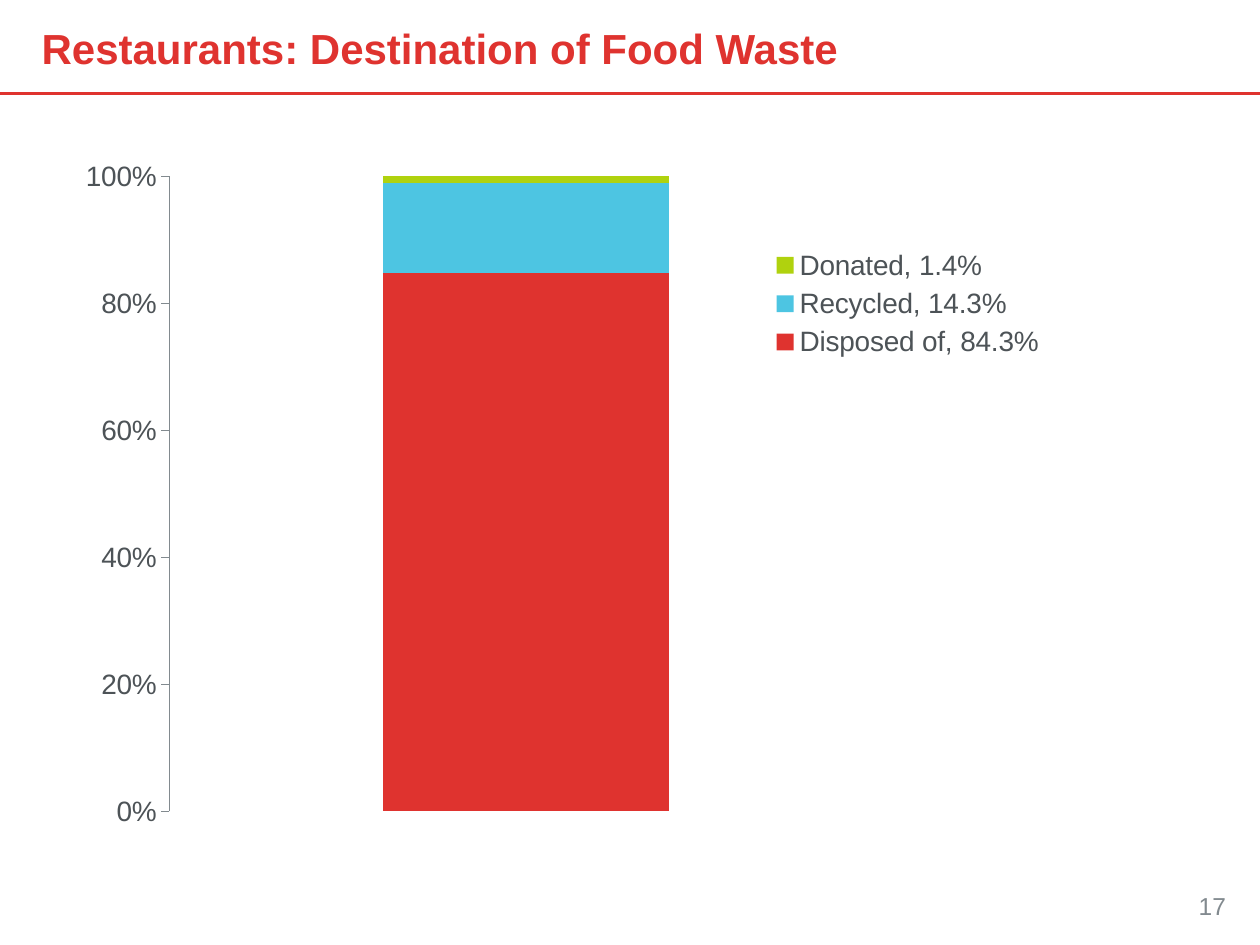
from dataclasses import dataclass

import lxml.etree
import pptx
import pptx.chart.data
import pptx.dml.color
import pptx.enum.chart
import pptx.enum.shapes
import pptx.enum.text
import pptx.oxml
import pptx.oxml.ns
import pptx.util
from pptx.util import Inches

COLORS = {
    "red": "DF332F",
    "blue": "4DC5E2",
    "green": "B0D20E",
    "text": "4D5357",
    "axis": "828A8F",
}
FONT = "Arial"


@dataclass
class Box:
    """A place on the slide, in inches."""
    left: float
    top: float
    width: float
    height: float

    def lengths(self) -> list[pptx.util.Length]:
        return [Inches(side) for side in (self.left, self.top, self.width, self.height)]


@dataclass
class Destination:
    name: str
    percent: int
    color: str


@dataclass
class Label:
    text: str
    box: Box
    font: dict
    color: str
    align: pptx.enum.text.PP_ALIGN
    anchor: pptx.enum.text.MSO_ANCHOR


CHART_BOX = Box(0.5, 1.17, 9, 5.5)
PLOT_BOX = Box(1.34, 1.4, 5.67, 5.04)
LEGEND_BOX = Box(6.08, 1.92, 2.25, 0.98)
DESTINATIONS = [
    Destination("Disposed of, 84.3%", 84, "red"),
    Destination("Recycled, 14.3%", 14, "blue"),
    Destination("Donated, 1.4%", 1, "green"),
]
LABELS = [
    Label("Restaurants: Destination of Food Waste", Box(0.33, 0, 9.31, 0.75),
          {"size": pptx.util.Pt(24), "bold": True}, "red",
          pptx.enum.text.PP_ALIGN.LEFT, pptx.enum.text.MSO_ANCHOR.MIDDLE),
    Label("17", Box(7.4, 7.07, 2.33, 0.33),
          {"size": pptx.util.Pt(14)}, "axis",
          pptx.enum.text.PP_ALIGN.RIGHT, pptx.enum.text.MSO_ANCHOR.TOP),
]


def rgb(name: str) -> pptx.dml.color.RGBColor:
    return pptx.dml.color.RGBColor.from_string(COLORS[name])


def set_values(target, values: dict) -> None:
    for name, value in values.items():
        setattr(target, name, value)


def style_font(font, color: str, values: dict) -> None:
    set_values(font, {"name": FONT, **values})
    font.color.rgb = rgb(color)


def add_label(slide, label: Label) -> None:
    frame = slide.shapes.add_textbox(*label.box.lengths()).text_frame
    set_values(frame, {
        "margin_left": 0, "margin_right": 0, "margin_top": 0, "margin_bottom": 0,
        "word_wrap": True, "vertical_anchor": label.anchor,
    })
    paragraph = frame.paragraphs[0]
    paragraph.alignment = label.align
    run = paragraph.add_run()
    run.text = label.text
    style_font(run.font, label.color, label.font)


def add_title_rule(slide) -> None:
    rule = slide.shapes.add_connector(
        pptx.enum.shapes.MSO_CONNECTOR.STRAIGHT,
        Inches(0), Inches(0.74), Inches(10), Inches(0.74))
    rule.line.color.rgb = rgb("red")
    rule.line.width = pptx.util.Pt(1.5)
    lxml.etree.SubElement(rule.element.spPr, pptx.oxml.ns.qn("a:effectLst"))


def layout_xml(box: Box, inner: bool = False):
    """Manual layout that puts a chart part at a box on the slide."""
    fractions = {
        "x": (box.left - CHART_BOX.left) / CHART_BOX.width,
        "y": (box.top - CHART_BOX.top) / CHART_BOX.height,
        "w": box.width / CHART_BOX.width,
        "h": box.height / CHART_BOX.height,
    }
    target = '<c:layoutTarget val="inner"/>' if inner else ""
    modes = '<c:xMode val="edge"/><c:yMode val="edge"/>'
    sizes = "".join(f'<c:{side} val="{value}"/>' for side, value in fractions.items())
    return pptx.oxml.parse_xml(
        f'<c:layout {pptx.oxml.ns.nsdecls("c")}><c:manualLayout>'
        f"{target}{modes}{sizes}</c:manualLayout></c:layout>")


def add_waste_chart(slide) -> None:
    waste = pptx.chart.data.CategoryChartData()
    waste.categories = ["1"]
    for item in DESTINATIONS:
        waste.add_series(item.name, [item.percent])
    chart = slide.shapes.add_chart(
        pptx.enum.chart.XL_CHART_TYPE.COLUMN_STACKED_100,
        *CHART_BOX.lengths(), waste).chart
    set_values(chart, {"has_title": False, "has_legend": True})
    style_font(chart.font, "text", {"size": pptx.util.Pt(10)})

    plot = chart.plots[0]
    set_values(plot, {"gap_width": 150, "overlap": 100, "vary_by_categories": False})
    for series, item in zip(plot.series, DESTINATIONS):
        series.format.fill.solid()
        series.format.fill.fore_color.rgb = rgb(item.color)

    chart.category_axis.visible = False
    percent_axis = chart.value_axis
    set_values(percent_axis, {
        "has_major_gridlines": False,
        "minimum_scale": 0,
        "maximum_scale": 1,
        "major_unit": 0.2,
        "major_tick_mark": pptx.enum.chart.XL_TICK_MARK.OUTSIDE,
    })
    set_values(percent_axis.tick_labels,
               {"number_format": "0%", "number_format_is_linked": False})
    percent_axis.format.line.color.rgb = rgb("axis")
    percent_axis.format.line.width = pptx.util.Pt(0.25)

    legend = chart.legend
    set_values(legend, {
        "position": pptx.enum.chart.XL_LEGEND_POSITION.RIGHT,
        "include_in_layout": False,
    })
    for font in (percent_axis.tick_labels.font, legend.font):
        style_font(font, "text", {"size": pptx.util.Pt(16)})

    plot_area = chart.element.chart.plotArea
    legend_xml = chart.element.chart.find(pptx.oxml.ns.qn("c:legend"))
    for parent in (plot_area, legend_xml):
        for old in parent.findall(pptx.oxml.ns.qn("c:layout")):
            parent.remove(old)
    plot_area.insert(0, layout_xml(PLOT_BOX, inner=True))
    legend_xml.find(pptx.oxml.ns.qn("c:legendPos")).addnext(layout_xml(LEGEND_BOX))


def main() -> None:
    deck = pptx.Presentation()
    set_values(deck, {"slide_width": Inches(10), "slide_height": Inches(7.5)})
    slide = deck.slides.add_slide(deck.slide_layouts[6])
    add_title_rule(slide)
    for label in LABELS:
        add_label(slide, label)
    add_waste_chart(slide)
    deck.save("out.pptx")


if __name__ == "__main__":
    main()
